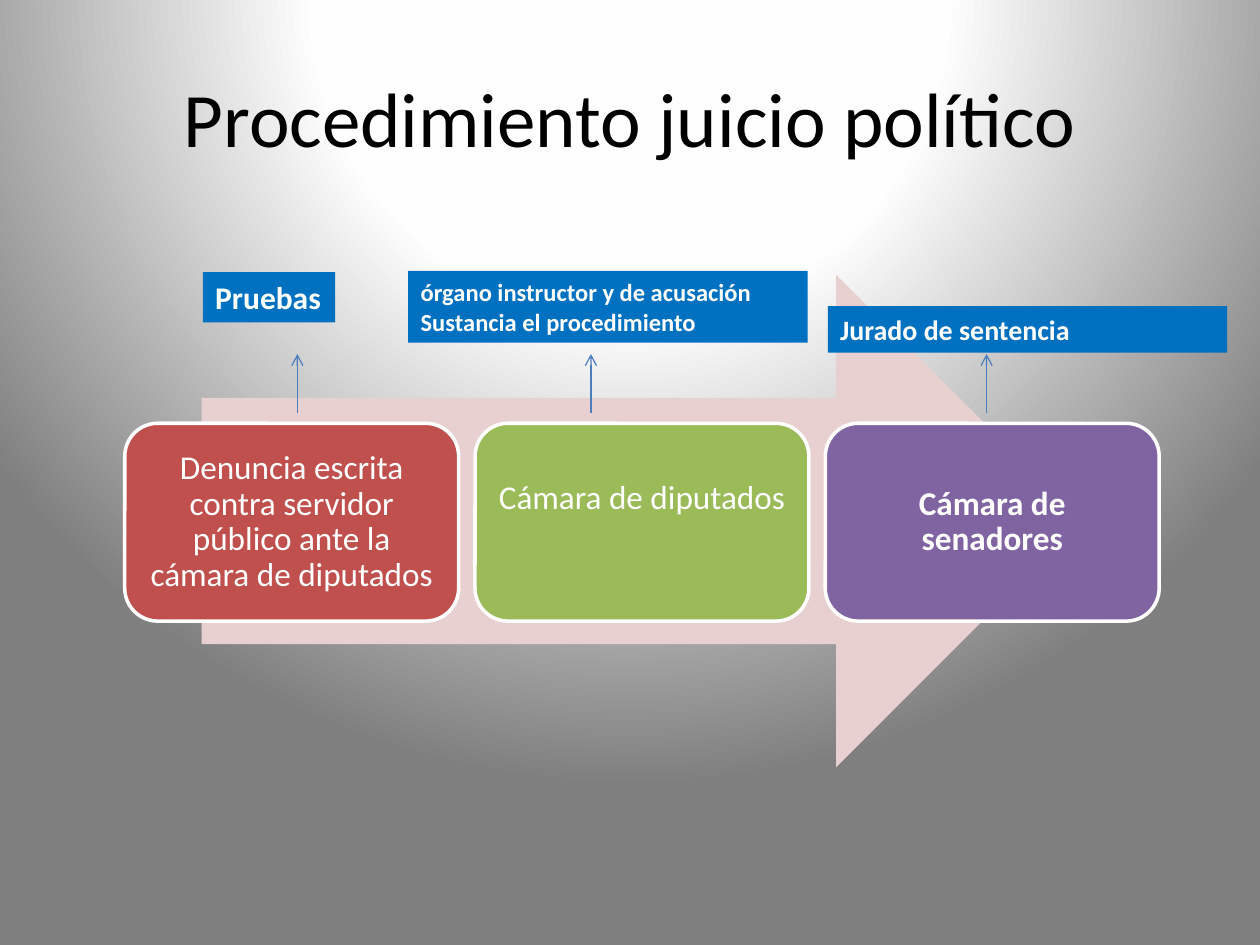
from lxml import etree
from pptx import Presentation
from pptx.dml.color import RGBColor
from pptx.enum.shapes import MSO_CONNECTOR, MSO_SHAPE
from pptx.enum.text import MSO_ANCHOR, PP_ALIGN
from pptx.oxml import parse_xml
from pptx.oxml.ns import qn
from pptx.util import Inches, Pt

RECT, ROUND, ARROW = MSO_SHAPE.RECTANGLE, MSO_SHAPE.ROUNDED_RECTANGLE, MSO_SHAPE.RIGHT_ARROW
LINE = MSO_CONNECTOR.STRAIGHT
LEFT, CENTER = PP_ALIGN.LEFT, PP_ALIGN.CENTER
MIDDLE = MSO_ANCHOR.MIDDLE

# Content
TITLE = "Procedimiento juicio político"
STEPS = [  # text, fill, bold, bottom inset
    ("Denuncia escrita contra servidor público ante la cámara de diputados", "C0504D", False, 0.08),
    ("Cámara de diputados", "9BBB59", False, 0.46),
    ("Cámara de senadores", "8064A2", True, 0.08),
]
LABELS = [  # lines, box, type size, wrap, pointer x
    (["Pruebas"], (1.61, 2.16, 1.05, 0.4), 18, False, 2.36),
    (["órgano instructor y de acusación", "Sustancia el procedimiento"],
     (3.24, 2.15, 3.17, 0.57), 14, True, 4.69),
    (["Jurado de sentencia"], (6.57, 2.43, 3.17, 0.37), 16, True, 7.83),
]

THEME = {
    "font": "Calibri", "title": 44, "step": 19,
    "ink": "000000", "light": "FFFFFF", "arrow": "E8D0D0",
    "label": "0070C0", "line": "4B7EBC",
    "back": [(0, "FFFFFF"), (40, "FEFEFE"), (100, "7F7F7F")],
}

# Layout
STEP_X, STEP_Y, STEP_W, STEP_H, PITCH = 0.99, 3.36, 2.65, 1.57, 2.78
POINT_FROM, POINT_TO = 3.28, 2.81


def color(name):
    return RGBColor.from_string(name)


def write(shape, lines, size, ink=THEME["light"], bold=False, align=LEFT,
          wrap=True, inset=None, bottom=None, space=None):
    frame = shape.text_frame
    frame.word_wrap = wrap
    frame.vertical_anchor = MIDDLE
    if inset is not None:
        frame.margin_left = frame.margin_right = frame.margin_top = Inches(inset)
        frame.margin_bottom = Inches(bottom)
    frame.text = "\n".join(lines)
    for para in frame.paragraphs:
        para.alignment = align
        para.line_spacing = space
        font = para.runs[0].font
        font.name, font.size, font.bold = THEME["font"], Pt(size), bold
        font.color.rgb = color(ink)


def add_box(slide, kind, box, fill, edge=None):
    shape = slide.shapes.add_shape(kind, *map(Inches, box))
    shape.shadow.inherit = False
    shape.fill.solid()
    shape.fill.fore_color.rgb = color(fill)
    if edge:
        shape.line.color.rgb = color(edge)
        shape.line.width = Pt(2)
    else:
        shape.line.fill.background()
    return shape


def add_pointer(slide, x):
    line = slide.shapes.add_connector(
        LINE, Inches(x), Inches(POINT_FROM), Inches(x), Inches(POINT_TO))
    line.line.color.rgb = color(THEME["line"])
    line.line.width = Pt(0.75)
    etree.SubElement(line.line._get_or_add_ln(), qn("a:tailEnd"), type="arrow")
    etree.SubElement(line._element.spPr, qn("a:effectLst"))


def set_back(slide):
    fill = slide.background.fill
    fill.gradient()
    stops = "".join(f'<a:gs pos="{pos * 1000}"><a:srgbClr val="{tone}"/></a:gs>'
                    for pos, tone in THEME["back"])
    grad = parse_xml(
        '<a:gradFill xmlns:a="http://schemas.openxmlformats.org/drawingml/2006/main"'
        f' rotWithShape="1"><a:gsLst>{stops}</a:gsLst><a:path path="circle">'
        '<a:fillToRect l="50000" t="-80000" r="50000" b="180000"/></a:path></a:gradFill>')
    old = slide.background._cSld.find(".//" + qn("a:gradFill"))
    old.getparent().replace(old, grad)


def main():
    deck = Presentation()
    deck.slide_width, deck.slide_height = Inches(10), Inches(7.5)
    slide = deck.slides.add_slide(deck.slide_layouts[5])
    set_back(slide)

    # Title
    title = slide.shapes.title
    title.left, title.top, title.width, title.height = map(Inches, (0.5, 0.3, 9, 1.25))
    write(title, [TITLE], THEME["title"], ink=THEME["ink"], align=CENTER)

    # Steps on the big arrow
    add_box(slide, ARROW, (1.6, 2.18, 6.99, 3.91), THEME["arrow"])
    for i, (text, fill, bold, bottom) in enumerate(STEPS):
        box = (STEP_X + i * PITCH, STEP_Y, STEP_W, STEP_H)
        step = add_box(slide, ROUND, box, fill, THEME["light"])
        write(step, [text], THEME["step"], bold=bold, align=CENTER,
              inset=0.08, bottom=bottom, space=0.9)

    # Labels and their pointers
    for lines, box, size, wrap, x in LABELS:
        add_pointer(slide, x)
        label = add_box(slide, RECT, box, THEME["label"])
        write(label, lines, size, bold=True, wrap=wrap)

    deck.save("out.pptx")


if __name__ == "__main__":
    main()
